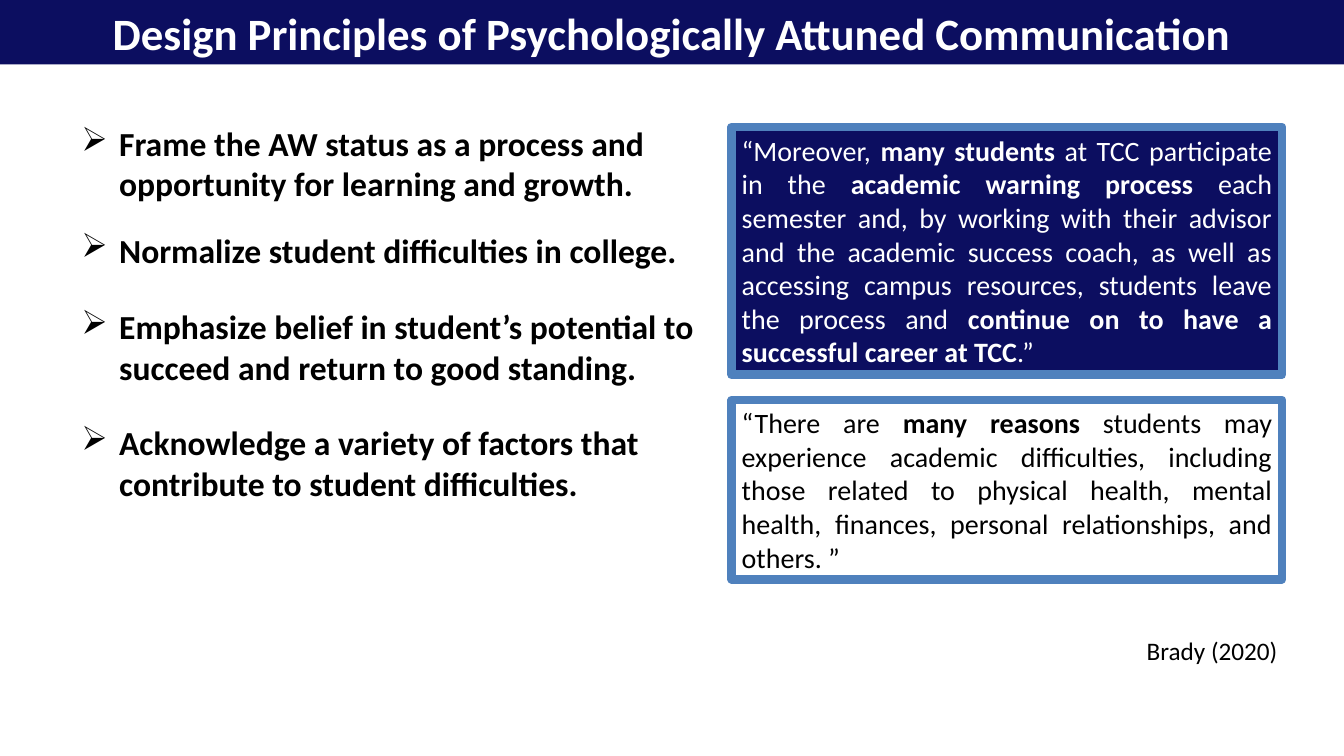
from lxml.etree import SubElement
from pptx import Presentation
from pptx.dml.color import RGBColor
from pptx.enum.shapes import MSO_SHAPE
from pptx.enum.text import MSO_ANCHOR, PP_ALIGN
from pptx.oxml.ns import qn
from pptx.util import Pt

TITLE = "Design Principles of Psychologically Attuned Communication"
CITATION = "Brady (2020)"

# (top, height, wording)
PRINCIPLES = [
    (84.25, 94.5, "Frame the AW status as a process and opportunity for learning and growth."),
    (160.5, 36, "Normalize student difficulties in college."),
    (215.25, 65.5, "Emphasize belief in student’s potential to succeed and return to good standing."),
    (298, 94.5, "Acknowledge a variety of factors that contribute to student difficulties."),
]

# (top, height, fill, text colour, runs); every second run is bold
QUOTES = [
    (90.75, 177, "navy", "white", [
        "“Moreover, ", "many students ", "at TCC participate in the ",
        "academic warning process ",
        "each semester and, by working with their advisor and the academic "
        "success coach, as well as accessing campus resources, students leave "
        "the process and ",
        "continue on to have a successful career at TCC", ".” "]),
    (285.75, 128, None, "black", [
        "“There are ", "many reasons ",
        "students may experience academic difficulties, including those related "
        "to physical health, mental health, finances, personal relationships, "
        "and others. ” "]),
]

THEME = {
    "font": "Calibri",
    "navy": RGBColor(0x0C, 0x0E, 0x60),
    "blue": RGBColor(0x4F, 0x81, 0xBD),
    "white": RGBColor(0xFF, 0xFF, 0xFF),
    "black": RGBColor(0, 0, 0),
    "title": 32, "principle": 24, "quote": 20, "citation": 18,
}

SLIDE_W, SLIDE_H = 960, 540
PRINCIPLE_X, PRINCIPLE_W, INDENT = 51, 502, 27
QUOTE_X, QUOTE_W, QUOTE_BORDER = 522.75, 393, 6.25


def style(r, size, color, bold=False):
    r.font.name = THEME["font"]
    r.font.size = Pt(THEME[size])
    r.font.color.rgb = THEME[color]
    r.font.bold = bold


def add_panel(s, x, y, w, h, fill=None, border=None):
    sp = s.shapes.add_shape(MSO_SHAPE.RECTANGLE, Pt(x), Pt(y), Pt(w), Pt(h))
    sp.shadow.inherit = False
    if fill:
        sp.fill.solid()
        sp.fill.fore_color.rgb = THEME[fill]
    else:
        sp.fill.background()
    if border:
        sp.line.color.rgb = THEME["blue"]
        sp.line.width = Pt(border)
    else:
        sp.line.fill.background()
    tf = sp.text_frame
    tf.word_wrap = True
    tf.vertical_anchor = MSO_ANCHOR.MIDDLE
    return tf


def add_text(s, x, y, w, h, text, size, bold=False):
    tf = s.shapes.add_textbox(Pt(x), Pt(y), Pt(w), Pt(h)).text_frame
    tf.word_wrap = True
    p = tf.paragraphs[0]
    p.text = text
    style(p.runs[0], size, "black", bold)
    return p


def add_arrow_bullet(p):
    pPr = p._p.get_or_add_pPr()
    pPr.set("marL", str(Pt(INDENT)))
    pPr.set("indent", str(-Pt(INDENT)))
    SubElement(pPr, qn("a:buChar"), char="➢")


def main():
    prs = Presentation()
    prs.slide_width, prs.slide_height = Pt(SLIDE_W), Pt(SLIDE_H)
    s = prs.slides.add_slide(prs.slide_layouts[6])

    p = add_panel(s, 0, 0, SLIDE_W, 46, "navy").paragraphs[0]
    p.text = TITLE
    p.alignment = PP_ALIGN.CENTER
    style(p.runs[0], "title", "white", True)

    for y, h, text in PRINCIPLES:
        add_arrow_bullet(add_text(s, PRINCIPLE_X, y, PRINCIPLE_W, h, text, "principle", True))

    for y, h, fill, color, parts in QUOTES:
        p = add_panel(s, QUOTE_X, y, QUOTE_W, h, fill, QUOTE_BORDER).paragraphs[0]
        p.alignment = PP_ALIGN.JUSTIFY
        for i, part in enumerate(parts):
            r = p.add_run()
            r.text = part
            style(r, "quote", color, i % 2 == 1)

    add_text(s, 812, 450, 124, 29, CITATION, "citation")
    prs.save("out.pptx")


if __name__ == "__main__":
    main()
